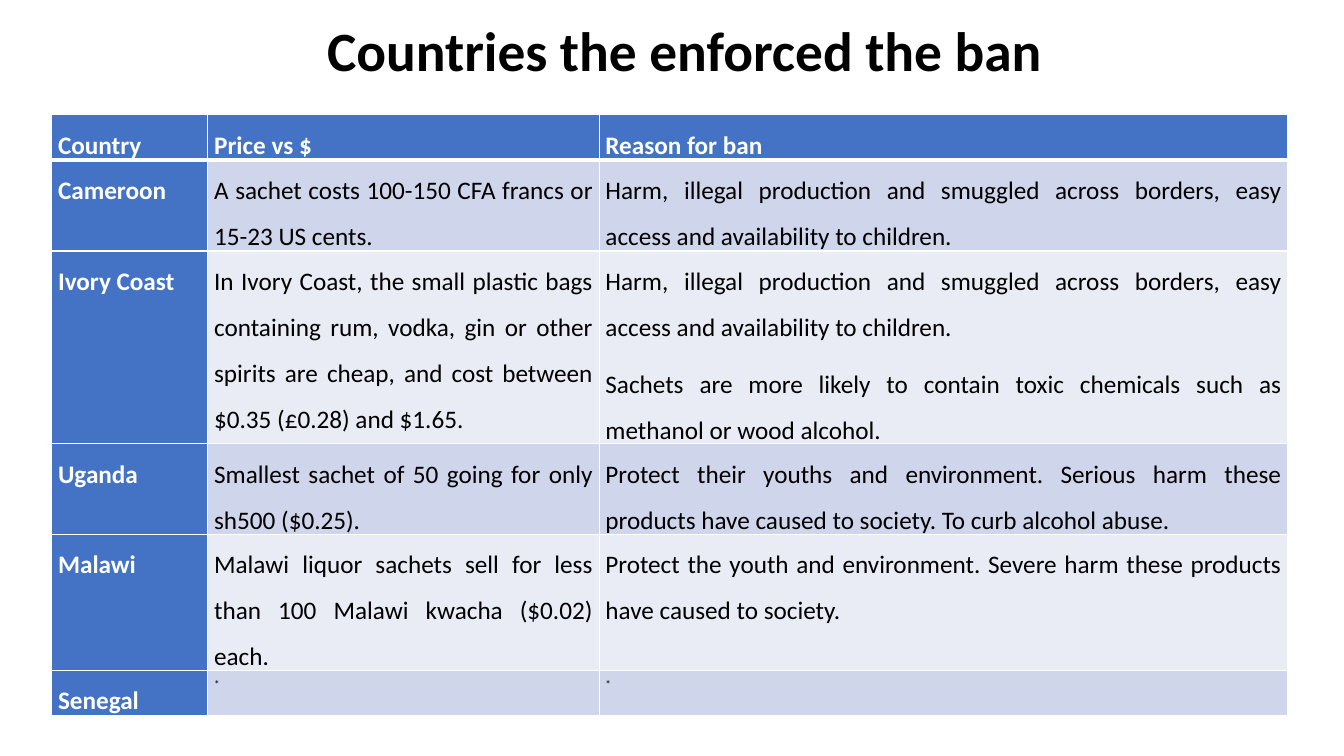
from lxml.etree import SubElement
from pptx import Presentation
from pptx.dml.color import RGBColor
from pptx.enum.text import MSO_ANCHOR, PP_ALIGN
from pptx.oxml.ns import qn
from pptx.util import Pt

FONT = "Calibri"
BLACK, WHITE, BLUE = "000000", "FFFFFF", "4472C4"
BANDS = ("CFD5EA", "E9EBF5")
COLUMN_WIDTHS = (111.5, 279.5, 492)
ROW_HEIGHTS = (26, 55, 119.5, 55, 83.5, 11.5)
HARM = ("Harm, illegal production and smuggled across borders, "
        "easy access and availability to children.")
ROWS = (
    ("Country", "Price vs $", "Reason for ban"),
    ("Cameroon", "A sachet costs 100-150 CFA francs or 15-23 US cents.", HARM),
    ("Ivory Coast",
     "In Ivory Coast, the small plastic bags containing rum, vodka, gin or other "
     "spirits are cheap, and cost between $0.35 (£0.28) and $1.65.",
     HARM + "\nSachets are more likely to contain toxic chemicals such as "
     "methanol or wood alcohol."),
    ("Uganda", "Smallest sachet of 50 going for only sh500 ($0.25).",
     "Protect their youths and environment. Serious harm these products have "
     "caused to society. To curb alcohol abuse."),
    ("Malawi",
     "Malawi liquor sachets sell for less than 100 Malawi kwacha ($0.02) each.",
     "Protect the youth and environment. Severe harm these products have "
     "caused to society."),
    ("Senegal", "*", "*"),
)


def color(hex_value):
    return RGBColor.from_string(hex_value)


def apply_format(target, values):
    for name, value in values.items():
        setattr(target, name, value)


def write_text(frame, text, size, hex_value, bold, layout):
    frame.text = text
    for paragraph in frame.paragraphs:
        apply_format(paragraph, layout)
        font = paragraph.runs[0].font
        apply_format(font, {"name": FONT, "size": Pt(size), "bold": bold})
        font.color.rgb = color(hex_value)


def add_borders(cell, widths):
    properties = cell._tc.get_or_add_tcPr()
    for side, width in widths.items():
        line = SubElement(properties, qn(f"a:ln{side}"), w=str(Pt(width)))
        fill = SubElement(line, qn("a:solidFill"))
        SubElement(fill, qn("a:srgbClr"), val=WHITE)


def add_title(slide, left, top, width, height):
    box = slide.shapes.add_textbox(Pt(left), Pt(top), Pt(width), Pt(height))
    frame = box.text_frame
    apply_format(frame, {"word_wrap": True, "vertical_anchor": MSO_ANCHOR.MIDDLE})
    write_text(frame, "Countries the enforced the ban", 39.6, BLACK, True,
               {"alignment": PP_ALIGN.CENTER, "line_spacing": 0.9})


def add_ban_table(slide, left, top):
    shape = slide.shapes.add_table(
        len(ROWS), len(COLUMN_WIDTHS), Pt(left), Pt(top),
        Pt(sum(COLUMN_WIDTHS)), Pt(sum(ROW_HEIGHTS)))
    table = shape.table
    table.first_col = True
    for column, width in zip(table.columns, COLUMN_WIDTHS):
        column.width = Pt(width)
    for row, height in zip(table.rows, ROW_HEIGHTS):
        row.height = Pt(height)

    margins = {"margin_left": Pt(4.5), "margin_right": Pt(4.5),
               "margin_top": Pt(0), "margin_bottom": Pt(0)}
    layout = {"alignment": PP_ALIGN.JUSTIFY, "line_spacing": 1.5,
              "space_after": Pt(8)}
    for row_index, texts in enumerate(ROWS):
        for column_index, text in enumerate(texts):
            cell = table.cell(row_index, column_index)
            heading = row_index == 0 or column_index == 0
            apply_format(cell, margins)
            add_borders(cell, {"L": 1, "R": 1,
                               "T": 3 if row_index == 1 else 1,
                               "B": 3 if row_index == 0 else 1})
            cell.fill.solid()
            cell.fill.fore_color.rgb = color(
                BLUE if heading else BANDS[(row_index - 1) % 2])
            write_text(cell.text_frame, text, 8 if text == "*" else 18,
                       WHITE if heading else BLACK, heading, layout)


def main():
    presentation = Presentation()
    apply_format(presentation, {"slide_width": Pt(960), "slide_height": Pt(540)})
    slide = presentation.slides.add_slide(presentation.slide_layouts[6])
    add_title(slide, 77, 13.5, 824, 49)
    add_ban_table(slide, 37, 82)
    presentation.save("out.pptx")


if __name__ == "__main__":
    main()
